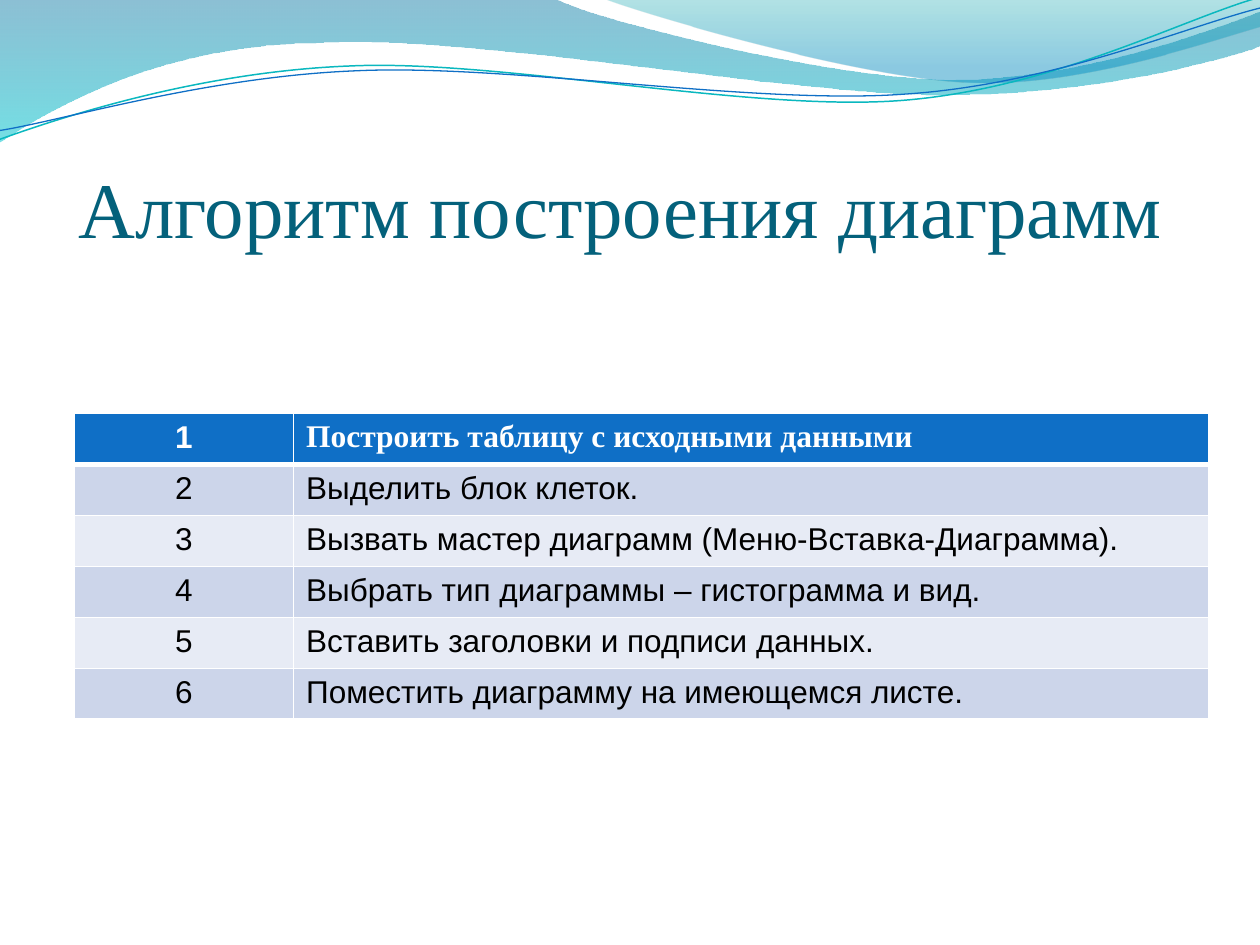
from lxml.etree import SubElement
from pptx import Presentation
from pptx.dml.color import RGBColor
from pptx.enum.text import MSO_ANCHOR as Anchor, PP_ALIGN as Align
from pptx.oxml.ns import qn
from pptx.util import Inches, Pt

UNITS_PER_INCH = 100
STEPS = [
    "Построить таблицу с исходными данными",
    "Выделить блок клеток.",
    "Вызвать мастер диаграмм (Меню-Вставка-Диаграмма).",
    "Выбрать тип диаграммы – гистограмма и вид.",
    "Вставить заголовки и подписи данных.",
    "Поместить диаграмму на имеющемся листе.",
]


def color(value):
    return RGBColor.from_string(value)


def to_units(values):
    return [round(value * UNITS_PER_INCH) for value in values]


def bend_segments(shape, segments, left, top):
    for line, segment in zip(list(shape.element.iter(qn("a:lnTo"))), segments):
        if len(segment) == 2:
            continue
        line.clear()
        curve = SubElement(line.getparent(), qn("a:cubicBezTo"))
        line.getparent().replace(line, curve)
        for x, y in zip(segment[::2], segment[1::2]):
            SubElement(curve, qn("a:pt"), x=str(x - left), y=str(y - top))


def add_outline(slide, start, segments, close):
    start = to_units(start)
    segments = [to_units(segment) for segment in segments]
    anchors = [segment[-2:] for segment in segments]
    builder = slide.shapes.build_freeform(*start, scale=Inches(1) / UNITS_PER_INCH)
    builder.add_line_segments(anchors, close=close)
    shape = builder.convert_to_shape()
    shape.shadow.inherit = False
    left, top = map(min, zip(start, *anchors))
    bend_segments(shape, segments, left, top)
    return shape


def add_wave(slide, start, segments, stops):
    shape = add_outline(slide, start, segments, True)
    shape.line.fill.background()
    shape.fill.gradient()
    shape.fill.gradient_angle = 270
    for stop, (position, value, _) in zip(shape.fill.gradient_stops, stops):
        stop.position = position
        stop.color.rgb = color(value)
    fills = shape.element.spPr.find(qn("a:gradFill")).iter(qn("a:srgbClr"))
    for element, (_, _, opacity) in zip(fills, stops):
        SubElement(element, qn("a:alpha")).set("val", str(opacity * 1000))


def add_wave_line(slide, start, segments, value, width):
    shape = add_outline(slide, start, segments, False)
    shape.rotation = 357.3
    shape.fill.background()
    shape.line.color.rgb = color(value)
    shape.line.width = Pt(width)


def add_run(paragraph, text, size, font, value, bold=False):
    run = paragraph.add_run()
    run.text = text
    run.font.size = Pt(size)
    run.font.name = font
    run.font.bold = bold
    run.font.color.rgb = color(value)


def add_title(slide, text):
    frame = slide.shapes.add_textbox(Inches(0.5), Inches(0.77), Inches(9), Inches(1.25)).text_frame
    frame.word_wrap = True
    frame.vertical_anchor = Anchor.BOTTOM
    frame.margin_left = frame.margin_right = frame.margin_bottom = 0
    frame.margin_top = Inches(0.05)
    paragraph = frame.paragraphs[0]
    paragraph.alignment = Align.CENTER
    add_run(paragraph, text, 45, "Times New Roman", "04617B")


def set_borders(cell, widths):
    properties = cell._tc.get_or_add_tcPr()
    for index, (side, width) in enumerate(widths.items()):
        line = SubElement(properties, qn(f"a:ln{side}"), w=str(Pt(width)))
        fill = SubElement(line, qn("a:solidFill"))
        SubElement(fill, qn("a:srgbClr"), val="FFFFFF")
        properties.insert(index, line)


def add_steps_table(slide, steps):
    row_height = 0.405
    table = slide.shapes.add_table(len(steps), 2, Inches(0.59), Inches(3.28),
                                   Inches(9), Inches(row_height * len(steps))).table
    table.first_row = table.horz_banding = False
    for column, width in zip(table.columns, (1.74, 7.26)):
        column.width = Inches(width)
    for row, step in enumerate(steps):
        header = row == 0
        fill = "0F6FC6" if header else ("CCD5EA" if row % 2 else "E7EBF5")
        borders = {"L": 1, "R": 1, "T": 3 if row == 1 else 1, "B": 3 if header else 1}
        for column, text in enumerate((str(row + 1), step)):
            cell = table.cell(row, column)
            cell.fill.solid()
            cell.fill.fore_color.rgb = color(fill)
            set_borders(cell, borders)
            paragraph = cell.text_frame.paragraphs[0]
            paragraph.alignment = Align.LEFT if column else Align.CENTER
            font = "Times New Roman" if header and column else "Arial"
            add_run(paragraph, text, 18, font, "FFFFFF" if header else "000000", header)


def add_waves(slide):
    add_wave(slide, (0, -0.01), [
        (4.4, -0.01),
        (4.76, 0.17, 6.64, 0.63, 7.58, 0.63),
        (8.53, 0.63, 9.58, 0.26, 10, 0.09),
        (10.01, 0.36),
        (9.83, 0.44, 8.7, 0.76, 7.46, 0.75),
        (6.22, 0.75, 3.82, 0.28, 2.57, 0.34),
        (1.29, 0.35, 0.46, 0.83, -0.01, 1.13),
    ], [(0, "0074A1", 45), (1, "00C6CF", 55)])
    add_wave(slide, (4.79, -0.01), [
        (5.09, 0.11, 6.82, 0.62, 7.69, 0.65),
        (8.56, 0.69, 9.61, 0.32, 10, 0.21),
        (10, 0),
    ], [(0, "00A1A9", 30), (0.8, "008BBF", 45)])
    add_wave_line(slide, (-0.02, 0.87), [
        (0.47, 0.72, 1.58, 0.41, 2.78, 0.42),
        (3.96, 0.42, 5.91, 0.93, 7.12, 0.9),
        (8.32, 0.87, 9.4, 0.36, 10, 0.22),
    ], "0AB8BF", 0.85)
    add_wave_line(slide, (-0.02, 0.8), [
        (0.46, 0.75, 1.64, 0.45, 2.83, 0.46),
        (4.03, 0.46, 5.96, 0.88, 7.16, 0.85),
        (8.35, 0.83, 9.42, 0.42, 10.02, 0.3),
    ], "0F6FC6", 0.75)


def main():
    presentation = Presentation()
    presentation.slide_width = Inches(10)
    presentation.slide_height = Inches(7.5)
    slide = presentation.slides.add_slide(presentation.slide_layouts[6])
    add_waves(slide)
    add_title(slide, "Алгоритм построения диаграмм ")
    add_steps_table(slide, STEPS)
    presentation.save("out.pptx")


if __name__ == "__main__":
    main()
